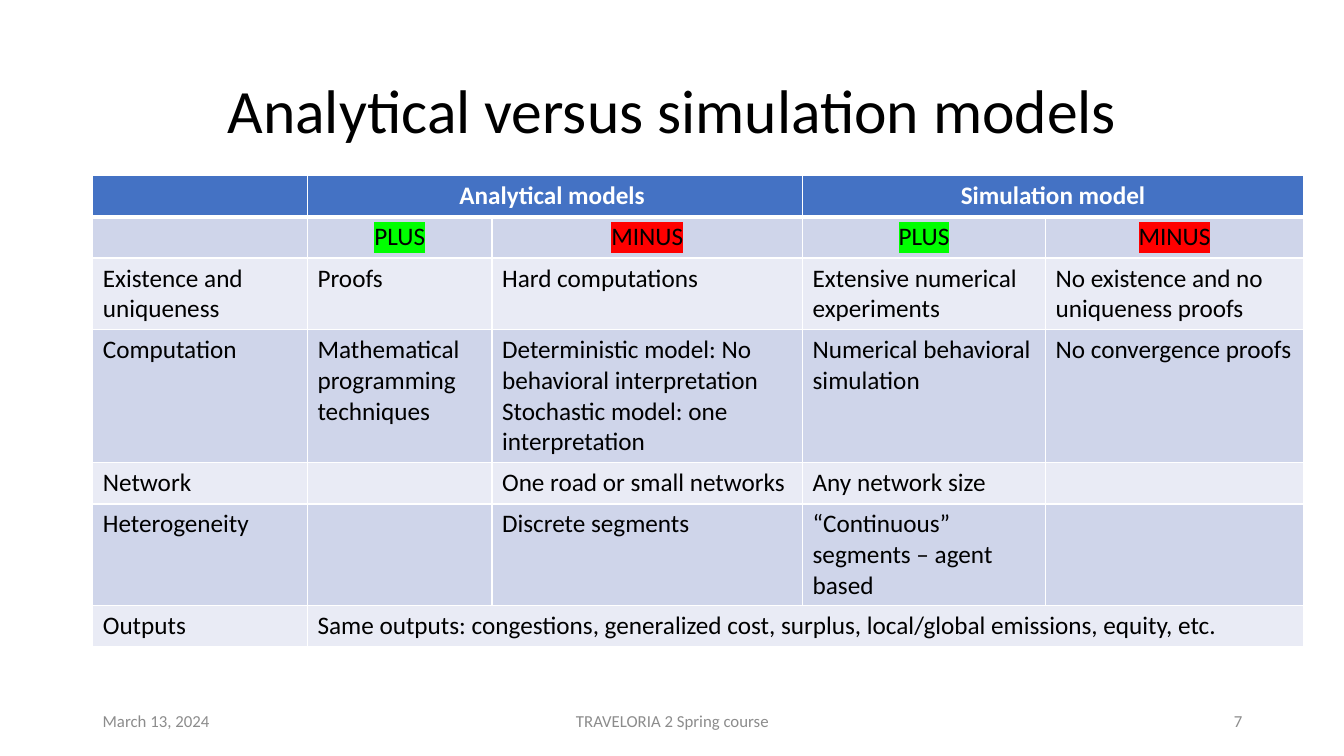
from dataclasses import dataclass

from lxml.etree import SubElement
from pptx import Presentation
from pptx.dml.color import RGBColor
from pptx.enum.text import MSO_VERTICAL_ANCHOR as Anchor, PP_PARAGRAPH_ALIGNMENT as Align
from pptx.oxml.ns import qn
from pptx.slide import Slide
from pptx.table import Table, _Cell as Cell
from pptx.text.text import _Paragraph as Paragraph
from pptx.util import Inches, Pt

FONT = "Calibri"
COLORS = {
    "black": "000000",
    "white": "FFFFFF",
    "footer": "8C8C8C",
    "header": "4472C4",
    "dark_band": "CFD5EA",
    "light_band": "E9EBF5",
    "PLUS": "00FF00",
    "MINUS": "FF0000",
}
COLUMN_WIDTHS = [2.13, 1.83, 3.08, 2.41, 2.56]
ROW_HEIGHTS = [0.41, 0.41, 0.71, 1.32, 0.41, 1.01, 0.41]
ROWS = [
    ["", "Analytical models ", "", "Simulation model", ""],
    ["", "PLUS", "MINUS", "PLUS", "MINUS"],
    ["Existence and uniqueness", "Proofs", "Hard computations",
     "Extensive numerical experiments", "No existence and no uniqueness proofs"],
    ["Computation", "Mathematical programming techniques",
     "Deterministic model: No behavioral interpretation Stochastic model: one interpretation",
     "Numerical behavioral simulation", "No convergence proofs"],
    ["Network", "", "One road or small networks", "Any network size", ""],
    ["Heterogeneity", "", "Discrete segments", "“Continuous” segments – agent based", ""],
    ["Outputs",
     "Same outputs: congestions, generalized cost, surplus, local/global emissions, equity, etc.",
     "", "", ""],
]
MERGES = [(0, 1, 2), (0, 3, 4), (6, 1, 4)]


@dataclass
class Label:
    text: str
    left: float
    top: float
    width: float
    height: float
    size: float
    color: str
    align: Align
    line_spacing: float = 1.0


LABELS = [
    Label("Analytical versus simulation models", 0.92, 0.4, 11.5, 1.45, 44, "black",
          Align.CENTER, 0.9),
    Label("March 13, 2024", 0.92, 6.95, 3, 0.4, 12, "footer", Align.LEFT),
    Label("TRAVELORIA 2 Spring course", 4.42, 6.95, 4.5, 0.4, 12, "footer", Align.CENTER),
    Label("7", 9.42, 6.95, 3, 0.4, 12, "footer", Align.RIGHT),
]


def add_run(paragraph: Paragraph, text: str, size: float, color: str,
            bold: bool = False, highlight: str = "") -> None:
    run = paragraph.add_run()
    run.text = text
    run.font.size = Pt(size)
    run.font.bold = bold
    run.font.color.rgb = RGBColor.from_string(COLORS[color])
    if highlight:
        marker = SubElement(run.font._element, qn("a:highlight"))
        SubElement(marker, qn("a:srgbClr"), val=COLORS[highlight])
    run.font.name = FONT


def add_label(slide: Slide, label: Label) -> None:
    box = slide.shapes.add_textbox(Inches(label.left), Inches(label.top),
                                   Inches(label.width), Inches(label.height))
    frame = box.text_frame
    frame.word_wrap = True
    frame.vertical_anchor = Anchor.MIDDLE
    paragraph = frame.paragraphs[0]
    paragraph.alignment = label.align
    paragraph.line_spacing = label.line_spacing
    add_run(paragraph, label.text, label.size, label.color)


def set_borders(cell: Cell, row: int) -> None:
    widths = {"L": 1, "R": 1, "T": 3 if row == 1 else 1, "B": 3 if row == 0 else 1}
    properties = cell._tc.get_or_add_tcPr()
    for side, width in widths.items():
        line = SubElement(properties, qn(f"a:ln{side}"), w=str(Pt(width)))
        fill = SubElement(line, qn("a:solidFill"))
        SubElement(fill, qn("a:srgbClr"), val=COLORS["white"])


def fill_cell(table: Table, row: int, column: int, text: str) -> None:
    cell = table.cell(row, column)
    set_borders(cell, row)
    band = "header" if row == 0 else "dark_band" if row % 2 else "light_band"
    cell.fill.solid()
    cell.fill.fore_color.rgb = RGBColor.from_string(COLORS[band])
    if not text:
        return
    paragraph = cell.text_frame.paragraphs[0]
    paragraph.alignment = Align.CENTER if row < 2 else Align.LEFT
    add_run(paragraph, text, 18, "white" if row == 0 else "black",
            bold=row == 0, highlight=text if row == 1 else "")


def add_comparison(slide: Slide) -> None:
    frame = slide.shapes.add_table(len(ROWS), len(COLUMN_WIDTHS), Inches(0.92), Inches(1.74),
                                   Inches(sum(COLUMN_WIDTHS)), Inches(sum(ROW_HEIGHTS)))
    table = frame.table
    table.horz_banding = False
    for column, width in zip(table.columns, COLUMN_WIDTHS):
        column.width = Inches(width)
    for row, height in zip(table.rows, ROW_HEIGHTS):
        row.height = Inches(height)
    for row_index, texts in enumerate(ROWS):
        for column_index, text in enumerate(texts):
            fill_cell(table, row_index, column_index, text)
    for row_index, first, last in MERGES:
        table.cell(row_index, first).merge(table.cell(row_index, last))


def main() -> None:
    presentation = Presentation()
    presentation.slide_width = Inches(13.33)
    presentation.slide_height = Inches(7.5)
    slide = presentation.slides.add_slide(presentation.slide_layouts[6])
    slide.background.fill.solid()
    slide.background.fill.fore_color.rgb = RGBColor.from_string(COLORS["white"])
    title, *footers = LABELS
    add_label(slide, title)
    add_comparison(slide)
    for footer in footers:
        add_label(slide, footer)
    presentation.save("out.pptx")


if __name__ == "__main__":
    main()
